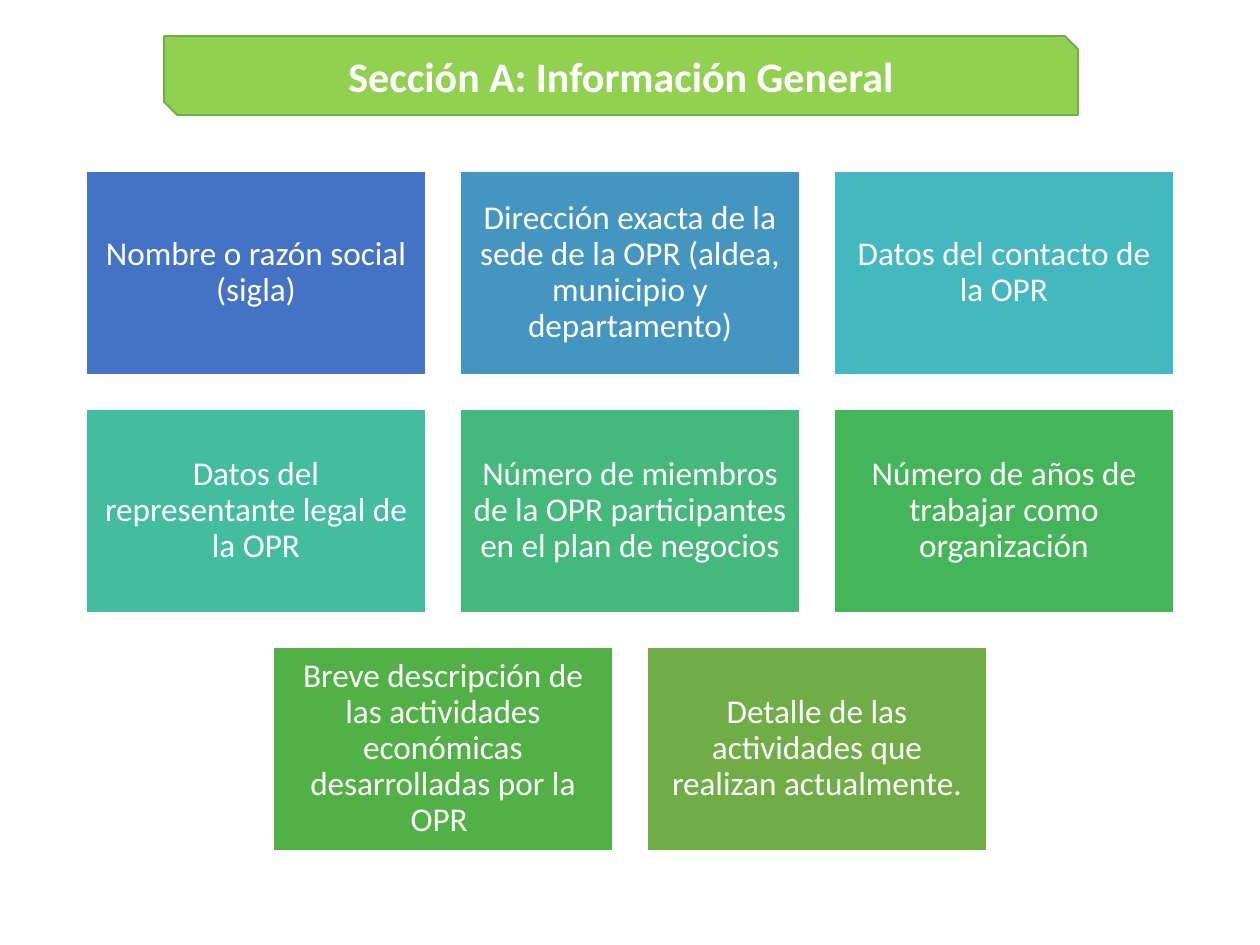
import pptx
import pptx.util
from pptx.dml.color import RGBColor
from pptx.enum.shapes import MSO_SHAPE
from pptx.enum.text import MSO_ANCHOR, PP_ALIGN

TITLE = "Sección A: Información General"
CARD_ROWS = [
    [("Nombre o razón social (sigla)", "blue"),
     ("Dirección exacta de la sede de la OPR (aldea, municipio y departamento)", "steel"),
     ("Datos del contacto de la OPR", "cyan")],
    [("Datos del representante legal de la OPR", "teal"),
     ("Número de miembros de la OPR participantes en el plan de negocios", "jade"),
     ("Número de años de trabajar como organización", "green")],
    [("Breve descripción de las actividades económicas desarrolladas por la OPR ", "leaf"),
     ("Detalle de las actividades que realizan actualmente.", "olive")],
]
COLORS = {
    "white": "FFFFFF", "lime": "92D050", "blue": "4472C4", "steel": "4496C1",
    "cyan": "43B8BF", "teal": "43BCA0", "jade": "44B97B", "green": "45B559",
    "leaf": "52B146", "olive": "70AD47",
}
FONT = "Calibri"
EMU_PER_PX = 914400 / 126
SLIDE_WIDTH, SLIDE_HEIGHT = 1260, 945
TITLE_BOX = (164, 36, 914, 79)
CARD_WIDTH, CARD_HEIGHT, GAP = 340, 204, 34
GRID_TOP = 171
CARD_INSET = 10


def px(length):
    return pptx.util.Emu(round(length * EMU_PER_PX))


def rgb(name):
    return RGBColor.from_string(COLORS[name])


def add_panel(slide, preset, box, text, fill, line, size, bold=False):
    """Add a filled shape with centred white text."""
    shape = slide.shapes.add_shape(preset, *map(px, box))
    shape.shadow.inherit = False
    shape.fill.solid()
    shape.fill.fore_color.rgb = rgb(fill)
    shape.line.color.rgb = rgb(line)
    shape.line.width = pptx.util.Pt(1)
    frame = shape.text_frame
    frame.word_wrap = True
    frame.vertical_anchor = MSO_ANCHOR.MIDDLE
    frame.text = text
    paragraph = frame.paragraphs[0]
    paragraph.alignment = PP_ALIGN.CENTER
    font = paragraph.runs[0].font
    font.name, font.size, font.bold = FONT, pptx.util.Pt(size), bold
    font.color.rgb = rgb("white")
    return shape


def add_card(slide, left, top, text, fill):
    box = (left, top, CARD_WIDTH, CARD_HEIGHT)
    frame = add_panel(slide, MSO_SHAPE.RECTANGLE, box, text, fill, "white", 19).text_frame
    frame.margin_left = frame.margin_right = px(CARD_INSET)
    frame.margin_top = frame.margin_bottom = px(CARD_INSET)
    frame.paragraphs[0].line_spacing = 0.9


def main():
    presentation = pptx.Presentation()
    presentation.slide_width, presentation.slide_height = px(SLIDE_WIDTH), px(SLIDE_HEIGHT)
    slide = presentation.slides.add_slide(presentation.slide_layouts[6])

    for row, cards in enumerate(CARD_ROWS):
        row_width = len(cards) * (CARD_WIDTH + GAP) - GAP
        row_left = (SLIDE_WIDTH - row_width) // 2
        top = GRID_TOP + row * (CARD_HEIGHT + GAP)
        for column, (text, fill) in enumerate(cards):
            add_card(slide, row_left + column * (CARD_WIDTH + GAP), top, text, fill)

    add_panel(slide, MSO_SHAPE.SNIP_2_DIAG_RECTANGLE, TITLE_BOX, TITLE,
              "lime", "olive", 24, bold=True)
    presentation.save("out.pptx")


if __name__ == "__main__":
    main()
